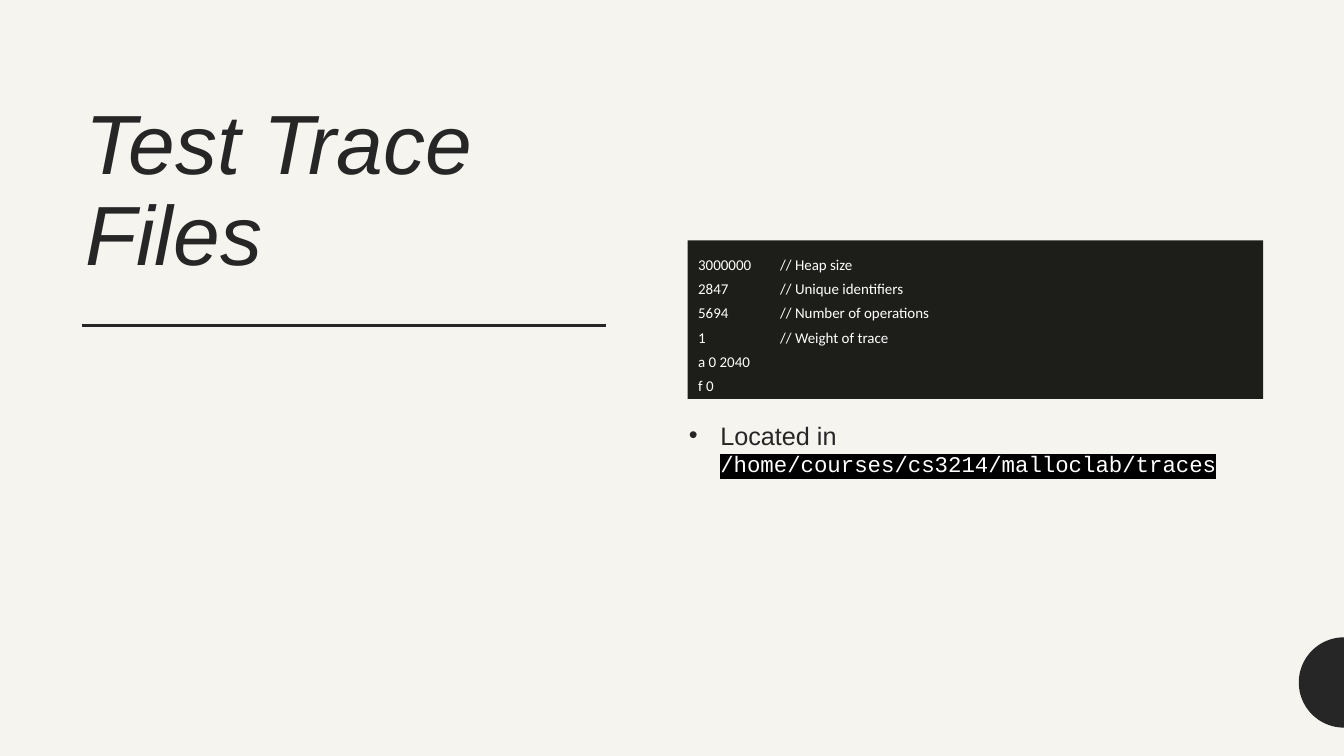
import math
from dataclasses import dataclass

from lxml import etree
from pptx import Presentation
from pptx import util as u
from pptx.dml.color import RGBColor
from pptx.enum import shapes, text
from pptx.oxml.ns import qn
from pptx.slide import Slide
from pptx.text.text import Font, TextFrame

PX = 9525  # EMU in one px, 96 px to the inch


@dataclass(frozen=True)
class TextStyle:
    font: str
    size: float
    color: str
    italic: bool = False


@dataclass(frozen=True)
class Theme:
    background: str = "F6F4EF"
    ink: str = "262626"
    panel: str = "1D1E1A"
    highlight: str = "000000"
    title: TextStyle = TextStyle("Arial", 60, "262626", italic=True)
    body: TextStyle = TextStyle("Arial", 18, "262626")
    file_path: TextStyle = TextStyle("Courier New", 16, "FFFFFF")
    trace: TextStyle = TextStyle("Calibri", 10.7, "FFFFFF")


@dataclass(frozen=True)
class Box:
    left: int
    top: int
    width: int
    height: int

    def emu(self) -> tuple[int, int, int, int]:
        return self.left * PX, self.top * PX, self.width * PX, self.height * PX


@dataclass(frozen=True)
class TraceColumn:
    box: Box
    lines: tuple[str, ...]


THEME = Theme()
TITLE_BOX = Box(80, 80, 502, 206)
PANEL_BOX = Box(655, 229, 548, 151)
LOCATION_BOX = Box(656, 389, 526, 132)
TRACE_COLUMNS = (
    TraceColumn(
        Box(665, 232, 60, 148),
        ("3000000", "2847", "5694", "1", "a 0 2040", "f 0"),
    ),
    TraceColumn(
        Box(743, 232, 185, 100),
        ("// Heap size", "// Unique identifiers",
         "// Number of operations", "// Weight of trace"),
    ),
)


def rgb(color: str) -> RGBColor:
    return RGBColor.from_string(color)


def apply_style(font: Font, style: TextStyle) -> None:
    font.name = style.font
    font.size = u.Pt(style.size)
    font.italic = style.italic
    font.color.rgb = rgb(style.color)


def fill_plain(shape, color: str) -> None:
    shape.shadow.inherit = False
    shape.fill.solid()
    shape.fill.fore_color.rgb = rgb(color)
    shape.line.fill.background()


def add_text_frame(slide: Slide, box: Box, inset_top: int, wrap: bool = True) -> TextFrame:
    frame = slide.shapes.add_textbox(*box.emu()).text_frame
    frame.word_wrap = wrap
    frame.margin_left = frame.margin_right = frame.margin_bottom = 0
    frame.margin_top = inset_top * PX
    return frame


def add_title(slide: Slide) -> None:
    frame = add_text_frame(slide, TITLE_BOX, inset_top=1)
    frame.margin_left = PX
    frame.vertical_anchor = text.MSO_ANCHOR.MIDDLE
    paragraph = frame.paragraphs[0]
    paragraph.text = "Test Trace Files"
    paragraph.line_spacing = 0.9
    apply_style(paragraph.font, THEME.title)


def add_title_rule(slide: Slide) -> None:
    rule = slide.shapes.add_connector(
        shapes.MSO_CONNECTOR.STRAIGHT, 577 * PX, 310 * PX, 78 * PX, 310 * PX
    )
    rule.line.color.rgb = rgb(THEME.ink)
    rule.line.width = u.Pt(1.5)
    etree.SubElement(rule._element.spPr, qn("a:effectLst"))


def add_edge_half_disc(slide: Slide) -> None:
    """Draw the half disc that meets the right edge of the slide."""
    center_x, center_y, radius, steps = 1280, 650, 43, 48
    angles = [math.pi * (0.5 + step / steps) for step in range(steps + 1)]
    points = [
        (round((center_x + radius * math.cos(angle)) * PX),
         round((center_y + radius * math.sin(angle)) * PX))
        for angle in angles
    ]
    builder = slide.shapes.build_freeform(*points[0])
    builder.add_line_segments(points[1:], close=True)
    fill_plain(builder.convert_to_shape(), THEME.ink)


def add_location(slide: Slide) -> None:
    paragraph = add_text_frame(slide, LOCATION_BOX, inset_top=11).paragraphs[0]
    properties = paragraph._p.get_or_add_pPr()
    properties.set("marL", str(30 * PX))
    properties.set("indent", str(-30 * PX))
    bullet_color = etree.SubElement(properties, qn("a:buClr"))
    etree.SubElement(bullet_color, qn("a:srgbClr"), val=THEME.ink)
    etree.SubElement(properties, qn("a:buFont"), typeface=THEME.body.font)
    etree.SubElement(properties, qn("a:buChar"), char="•")

    lead = paragraph.add_run()
    lead.text = "Located in "
    apply_style(lead.font, THEME.body)

    location = paragraph.add_run()
    location.text = "/home/courses/cs3214/malloclab/traces"
    apply_style(location.font, THEME.file_path)
    highlight = etree.Element(qn("a:highlight"))
    etree.SubElement(highlight, qn("a:srgbClr"), val=THEME.highlight)
    location._r.rPr.find(qn("a:solidFill")).addnext(highlight)


def add_trace_column(slide: Slide, column: TraceColumn) -> None:
    frame = add_text_frame(slide, column.box, inset_top=11, wrap=False)
    for index, line in enumerate(column.lines):
        paragraph = frame.add_paragraph() if index else frame.paragraphs[0]
        paragraph.text = line
        paragraph.space_before = u.Pt(4.6 if index else 0)
        apply_style(paragraph.font, THEME.trace)


def main() -> None:
    presentation = Presentation()
    presentation.slide_width = 1280 * PX
    presentation.slide_height = 720 * PX
    slide = presentation.slides.add_slide(presentation.slide_layouts[6])
    slide.background.fill.solid()
    slide.background.fill.fore_color.rgb = rgb(THEME.background)

    add_title(slide)
    add_title_rule(slide)
    add_edge_half_disc(slide)
    add_location(slide)
    panel = slide.shapes.add_shape(shapes.MSO_SHAPE.RECTANGLE, *PANEL_BOX.emu())
    fill_plain(panel, THEME.panel)
    for column in TRACE_COLUMNS:
        add_trace_column(slide, column)

    presentation.save("out.pptx")


if __name__ == "__main__":
    main()
